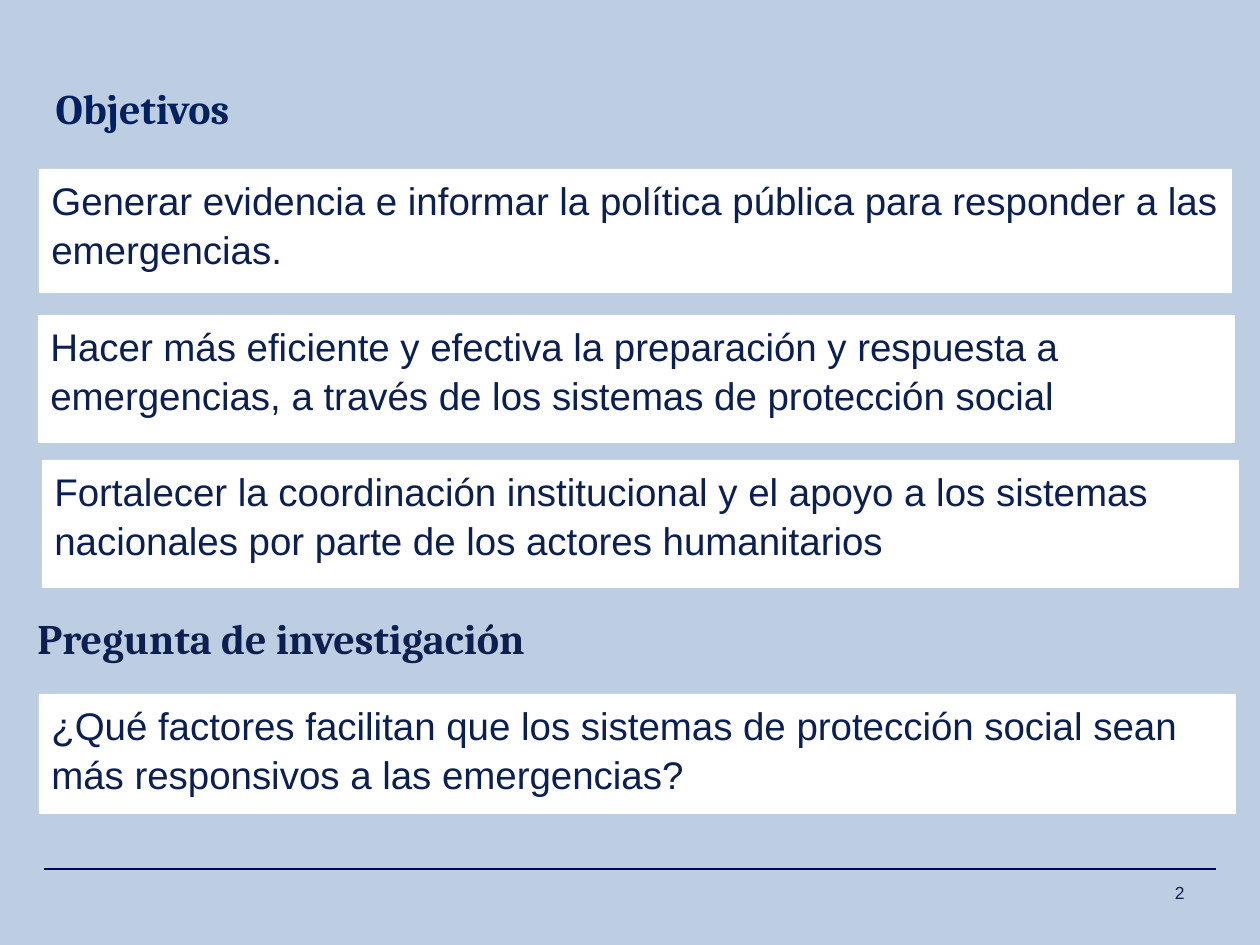
from pptx import Presentation
from pptx.dml.color import RGBColor as Rgb
from pptx.enum.shapes import MSO_CONNECTOR as Conn, MSO_SHAPE as Kind
from pptx.enum.text import MSO_ANCHOR as Anchor, PP_ALIGN as Align
from pptx.oxml.ns import qn
from pptx.util import Pt

SCALE = 914400 / 126
HUES = {"back": "BDCEE2", "card": "FFFFFF", "title": "002060", "text": "0B1F51", "rule": "00005E"}
CARDS = [
    ((39, 169, 1193, 124), "Generar evidencia e informar la política pública para responder a las emergencias."),
    ((38, 315, 1197, 128), "Hacer más eficiente y efectiva la preparación y respuesta a emergencias, "
                           "a través de los sistemas de protección social"),
    ((42, 460, 1197, 128), "Fortalecer la coordinación institucional y el apoyo a los sistemas nacionales "
                           "por parte de los actores humanitarios"),
    ((39, 694, 1197, 120), "¿Qué factores facilitan que los sistemas de protección social sean más responsivos "
                           "a las emergencias?"),
]


def px(*nums):
    return [round(num * SCALE) for num in nums]


def hue(name):
    return Rgb.from_string(HUES[name])


def write(shape, text, size, face="Arial", tint="text", bold=False, align=Align.LEFT, anchor=Anchor.TOP):
    frame = shape.text_frame
    frame.word_wrap = True
    frame.vertical_anchor = anchor
    frame.text = text
    par = frame.paragraphs[0]
    par.alignment = align
    font = par.font
    font.name, font.size, font.bold = face, Pt(size), bold
    font.color.rgb = hue(tint)
    return par


def head(shape, text, tint):
    write(shape, text, 24, "Cambria", tint, True, anchor=Anchor.MIDDLE)


def card(slide, box, text):
    shape = slide.shapes.add_shape(Kind.RECTANGLE, *px(*box))
    shape.shadow.inherit = False
    shape.fill.solid()
    shape.fill.fore_color.rgb = hue("card")
    shape.line.fill.background()
    shape.text_frame.margin_right = px(6)[0]
    write(shape, text, 22).line_spacing = 1.05


def rule(slide, *ends):
    line = slide.shapes.add_connector(Conn.STRAIGHT, *px(*ends))
    line.line.color.rgb = hue("rule")
    line.line.width = Pt(1)
    props = line._element.spPr
    props.append(props.makeelement(qn("a:effectLst"), {}))


def main():
    deck = Presentation()
    deck.slide_width, deck.slide_height = px(1260, 945)
    slide = deck.slides.add_slide(deck.slide_layouts[5])
    fill = slide.background.fill
    fill.solid()
    fill.fore_color.rgb = hue("back")

    rule(slide, 44, 869, 1216, 869)
    title = slide.shapes.title
    title.left, title.top, title.width, title.height = px(43, 55, 1153, 105)
    head(title, "Objetivos", "title")
    for box, text in CARDS:
        card(slide, box, text)
    query = slide.shapes.add_textbox(*px(25, 585, 1153, 105))
    head(query, "Pregunta de investigación", "text")
    page = slide.shapes.add_textbox(*px(903, 876, 294, 33))
    write(page, "2", 10, align=Align.RIGHT)
    deck.save("out.pptx")


if __name__ == "__main__":
    main()
